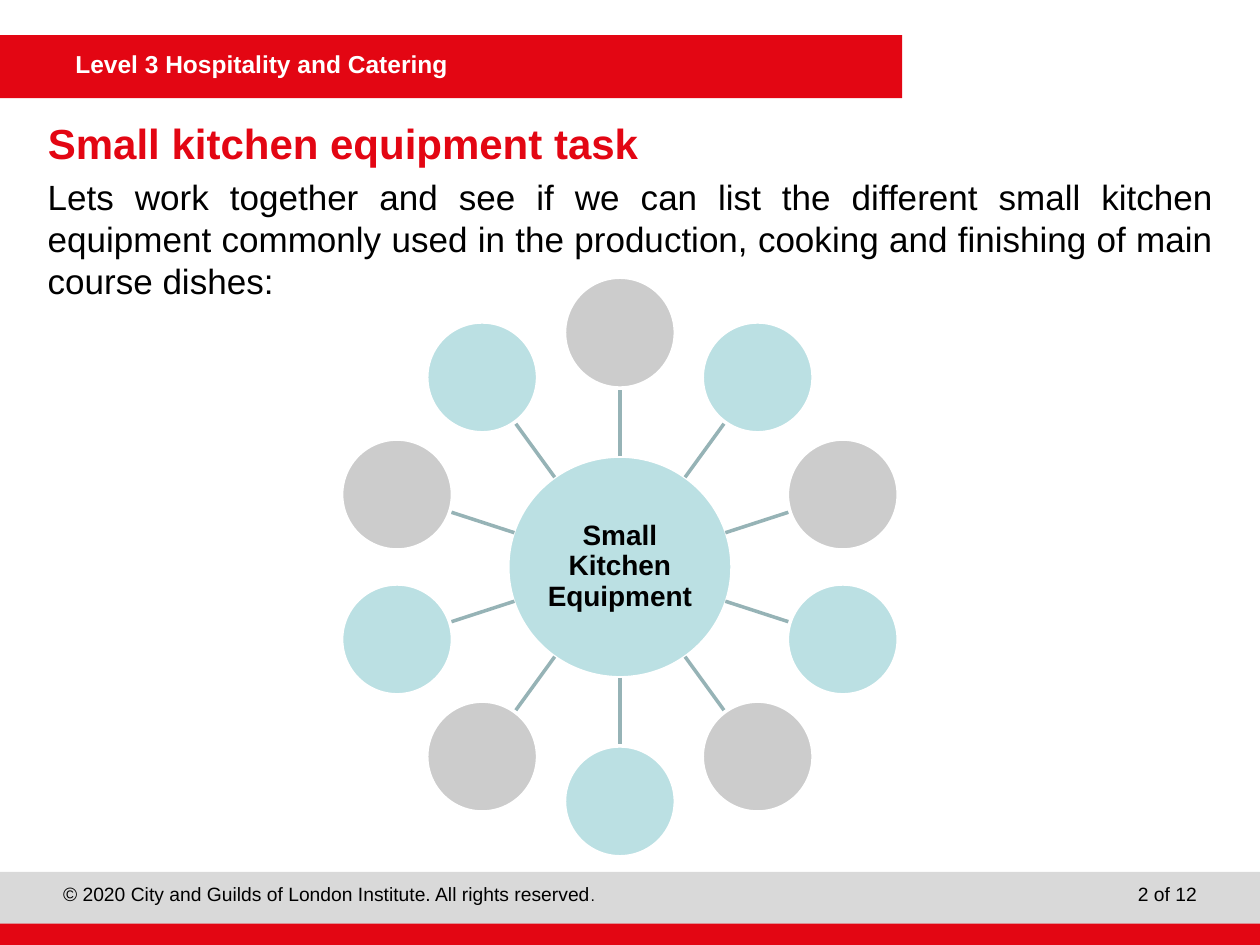
import math
from dataclasses import dataclass

from lxml import etree
from pptx import Presentation
from pptx.dml.color import RGBColor
from pptx.enum import shapes, text
from pptx.oxml import ns
from pptx.util import Inches, Pt


@dataclass(frozen=True)
class Theme:
    font: str = "Arial"
    red: str = "E30613"
    footer_grey: str = "D9D9D9"
    black: str = "000000"
    white: str = "FFFFFF"
    aqua: str = "BBE0E3"
    grey: str = "CCCCCC"
    spoke: str = "96B3B6"
    title_size: int = 24
    body_size: int = 20
    hub_size: int = 16
    banner_size: int = 14
    footer_size: int = 11
    full_stop_size: int = 9
    line_width: int = 2


THEME = Theme()
HUB_X, HUB_Y = 4.92, 4.5
HUB_WIDTH, HUB_HEIGHT = 1.78, 1.76
BUBBLE_COUNT, BUBBLE_SIZE, RING_RADIUS = 10, 0.88, 1.86
SPOKE_START, SPOKE_END = 0.88, 1.42


def add_filled(slide, kind, left, top, width, height, fill, outline=None):
    shape = slide.shapes.add_shape(
        kind, Inches(left), Inches(top), Inches(width), Inches(height))
    shape.shadow.inherit = False
    shape.fill.solid()
    shape.fill.fore_color.rgb = RGBColor.from_string(fill)
    if outline:
        shape.line.color.rgb = RGBColor.from_string(outline)
        shape.line.width = Pt(THEME.line_width)
    else:
        shape.line.fill.background()
    return shape


def add_circle(slide, x, y, width, height, fill):
    """Add an outlined ellipse centred on x, y."""
    return add_filled(slide, shapes.MSO_SHAPE.OVAL, x - width / 2,
                      y - height / 2, width, height, fill, THEME.white)


def write(frame, runs, color=THEME.black, bold=False, inset=None,
          anchor=text.MSO_ANCHOR.TOP, **paragraph_format):
    """Fill a text frame with one paragraph of (wording, size) runs."""
    frame_format = {"word_wrap": True, "auto_size": text.MSO_AUTO_SIZE.NONE,
                    "vertical_anchor": anchor}
    if inset is not None:
        for side in ("left", "top", "right", "bottom"):
            frame_format[f"margin_{side}"] = Inches(inset)
    for name, value in frame_format.items():
        setattr(frame, name, value)
    paragraph = frame.paragraphs[0]
    for name, value in paragraph_format.items():
        setattr(paragraph, name, value)
    for wording, size in runs:
        run = paragraph.add_run()
        run.text = wording
        font_format = {"name": THEME.font, "size": Pt(size), "bold": bold}
        for name, value in font_format.items():
            setattr(run.font, name, value)
        run.font.color.rgb = RGBColor.from_string(color)


def add_text(slide, left, top, width, height, runs, **text_format):
    box = slide.shapes.add_textbox(
        Inches(left), Inches(top), Inches(width), Inches(height))
    write(box.text_frame, runs, **text_format)


def add_banner(slide):
    add_filled(slide, shapes.MSO_SHAPE.RECTANGLE, 0, 0.28, 7.16, 0.5, THEME.red)
    add_text(slide, 0.5, 0.34, 6.66, 0.34,
             [("Level 3 Hospitality and Catering", THEME.banner_size)],
             color=THEME.white, bold=True)


def add_footer(slide):
    for top, height, fill in ((6.92, 0.42, THEME.footer_grey),
                              (7.33, 0.17, THEME.red)):
        add_filled(slide, shapes.MSO_SHAPE.RECTANGLE, 0, top, 10, height, fill)
    add_text(slide, 0.5, 7, 7.08, 0.25,
             [("© 2020 City and Guilds of London Institute. All rights reserved",
               THEME.footer_size), (".", THEME.full_stop_size)], inset=0)
    add_text(slide, 7.92, 7, 1.58, 0.25, [("2 of 12", THEME.footer_size)],
             inset=0, alignment=text.PP_ALIGN.RIGHT)


def set_title(slide):
    title = slide.shapes.title
    place = {"left": 0.28, "top": 0.92, "width": 8.99, "height": 0.42}
    for name, value in place.items():
        setattr(title, name, Inches(value))
    write(title.text_frame, [("Small kitchen equipment task", THEME.title_size)],
          color=THEME.red, bold=True, anchor=text.MSO_ANCHOR.MIDDLE,
          alignment=text.PP_ALIGN.LEFT)


def add_task(slide):
    add_text(slide, 0.28, 1.34, 9.45, 5.37,
             [("Lets work together and see if we can list the different small "
               "kitchen equipment commonly used in the production, cooking and "
               "finishing of main course dishes:", THEME.body_size)],
             alignment=text.PP_ALIGN.JUSTIFY, line_spacing=Pt(24),
             space_after=Pt(10))


def ring_point(angle, radius):
    """Return the point at a clockwise angle from the top of the hub."""
    return HUB_X + radius * math.sin(angle), HUB_Y - radius * math.cos(angle)


def add_spoke(slide, angle):
    ends = ring_point(angle, SPOKE_START) + ring_point(angle, SPOKE_END)
    spoke = slide.shapes.add_connector(
        shapes.MSO_CONNECTOR.STRAIGHT, *(Inches(value) for value in ends))
    spoke.line.color.rgb = RGBColor.from_string(THEME.spoke)
    spoke.line.width = Pt(THEME.line_width)
    etree.SubElement(spoke._element.spPr, ns.qn("a:effectLst"))


def add_mind_map(slide):
    hub = add_circle(slide, HUB_X, HUB_Y, HUB_WIDTH, HUB_HEIGHT, THEME.aqua)
    write(hub.text_frame, [("Small Kitchen Equipment", THEME.hub_size)],
          bold=True, inset=0.01, anchor=text.MSO_ANCHOR.MIDDLE,
          alignment=text.PP_ALIGN.CENTER, line_spacing=0.9)
    for index in range(BUBBLE_COUNT):
        angle = math.tau * index / BUBBLE_COUNT
        add_spoke(slide, angle)
        add_circle(slide, *ring_point(angle, RING_RADIUS), BUBBLE_SIZE,
                   BUBBLE_SIZE, THEME.aqua if index % 2 else THEME.grey)


def main():
    deck = Presentation()
    deck.slide_width, deck.slide_height = Inches(10), Inches(7.5)
    slide = deck.slides.add_slide(deck.slide_layouts[5])
    add_banner(slide)
    add_footer(slide)
    set_title(slide)
    add_task(slide)
    add_mind_map(slide)
    deck.save("out.pptx")


if __name__ == "__main__":
    main()
